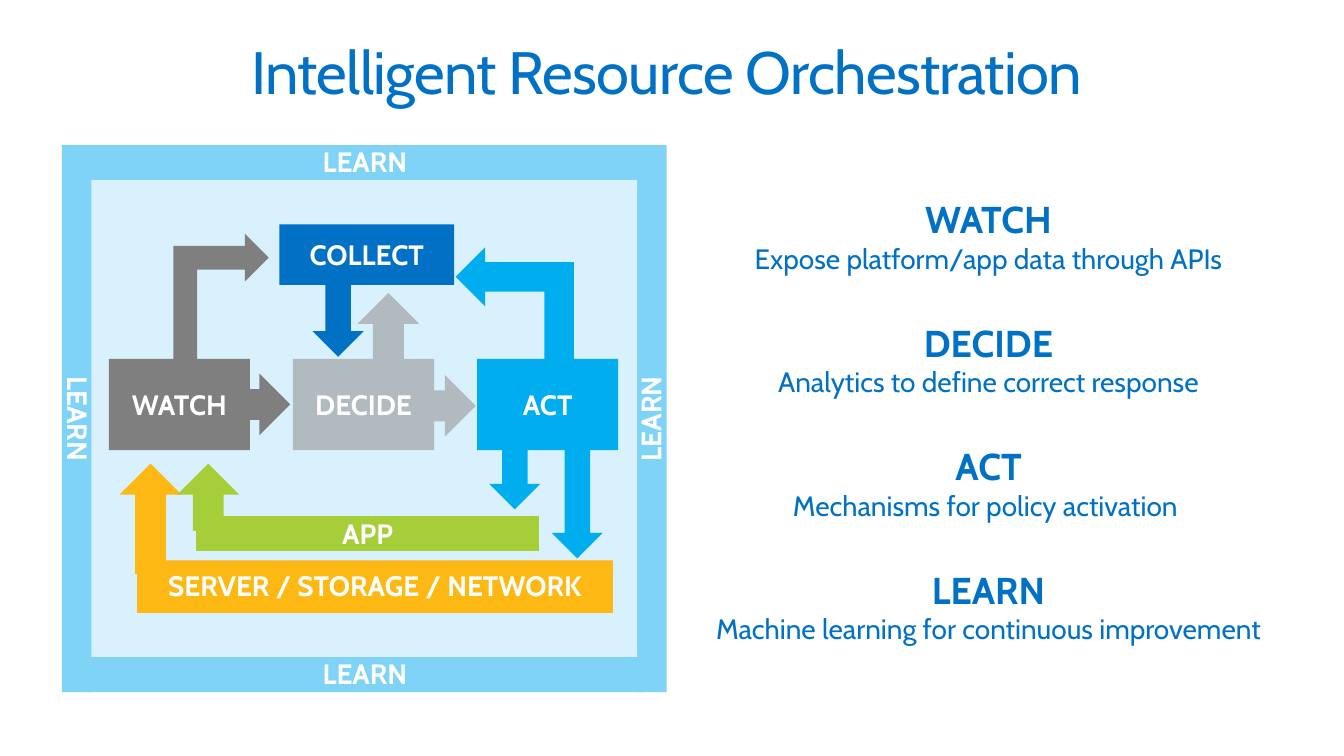
from lxml import etree
from pptx import Presentation
from pptx.dml import color
from pptx.enum import shapes, text
from pptx.oxml import ns
from pptx.util import Inches, Pt

FONT = "Cabin"
WHITE = "FFFFFF"
BLUE = "0071C5"
CYAN = "00AEEF"
SKY = "7ED3F7"
GRAY = "7F7F7F"
SILVER = "B1BABF"
ORANGE = "FDB813"
GREEN = "A6CE39"
RECTANGLE = shapes.MSO_SHAPE.RECTANGLE
ARROW = shapes.MSO_SHAPE.RIGHT_ARROW
BENT_ARROW = shapes.MSO_SHAPE.BENT_UP_ARROW


def rgb(value):
    return color.RGBColor.from_string(value)


def add_run(paragraph, words, size, fill, bold=False):
    paragraph.alignment = text.PP_ALIGN.CENTER
    run = paragraph.add_run()
    run.text = words
    run.font.name = FONT
    run.font.size = Pt(size)
    run.font.bold = bold
    run.font.color.rgb = rgb(fill)
    return run


def set_insets(frame, horizontal, vertical):
    frame.word_wrap = True
    frame.margin_left = frame.margin_right = Inches(horizontal)
    frame.margin_top = frame.margin_bottom = Inches(vertical)


def add_block(slide, kind, box, fill, rotation=0):
    shape = slide.shapes.add_shape(kind, *map(Inches, box))
    shape.shadow.inherit = False
    shape.fill.solid()
    shape.fill.fore_color.rgb = rgb(fill)
    shape.line.fill.background()
    shape.rotation = rotation
    return shape


def add_label(slide, box, fill, words, rotation=0, spacing=1.0):
    shape = add_block(slide, RECTANGLE, box, fill, rotation)
    frame = shape.text_frame
    set_insets(frame, 0.06, 0.03)
    frame.vertical_anchor = text.MSO_ANCHOR.MIDDLE
    frame.paragraphs[0].line_spacing = spacing
    add_run(frame.paragraphs[0], words, 15, WHITE, True)


def add_title(slide, left, top, width, height):
    box = slide.shapes.add_textbox(*map(Inches, (left, top, width, height)))
    set_insets(box.text_frame, 0, 0)
    run = add_run(box.text_frame.paragraphs[0],
                  "Intelligent Resource Orchestration", 32, BLUE)
    run.font._element.set("spc", "-40")


def add_learn_frame(slide, left, top, width, height):
    side, bar = 0.22, 0.26
    panel = add_block(slide, RECTANGLE,
                      (left + 0.19, top + 0.23, 4.15, 3.63), SKY)
    tint = panel.fill._xPr.find(ns.qn("a:solidFill"))[0]
    etree.SubElement(tint, ns.qn("a:alpha")).set("val", "30000")
    for y in (top, top + height - bar):
        add_label(slide, (left + 0.18, y, 4.15, bar), SKY, "LEARN", 0, 0.95)
    middle = top + (height - side) / 2
    for center, rotation in ((left + side / 2, 90),
                             (left + width - side / 2, 270)):
        add_label(slide, (center - height / 2, middle, height, side),
                  SKY, "LEARN", rotation, 0.95)


def add_flow(slide, left, top):
    arrows = [
        (ARROW, 3.06, 2.21, 0.62, 0.38, CYAN, 90),
        (ARROW, 3.31, 2.36, 1.05, 0.38, CYAN, 90),
        (BENT_ARROW, 2.91, 0.78, 0.92, 0.88, CYAN, 270),
        (ARROW, 2.16, 1.14, 0.54, 0.46, SILVER, 270),
        (BENT_ARROW, 0.64, 0.85, 1.09, 0.71, GRAY, 90),
        (ARROW, 1.77, 1.1, 0.57, 0.38, BLUE, 90),
        (ARROW, 2.31, 1.71, 0.77, 0.46, SILVER, 0),
        (ARROW, 0.93, 1.7, 0.77, 0.46, GRAY, 0),
        (ARROW, 0.25, 2.55, 0.82, 0.46, ORANGE, 270),
        (ARROW, 0.84, 2.39, 0.5, 0.46, GREEN, 270),
    ]
    for kind, x, y, width, height, fill, rotation in arrows:
        arrow = add_block(slide, kind, (left + x, top + y, width, height),
                          fill, rotation)
        if kind == BENT_ARROW and rotation == 90:
            arrow._element.spPr.find(ns.qn("a:xfrm")).set("flipH", "1")

    steps = (("WATCH", GRAY), ("DECIDE", SILVER), ("ACT", CYAN))
    for index, (words, fill) in enumerate(steps):
        add_label(slide, (left + 0.35 + 1.37 * index, top + 1.59, 1.05, 0.68),
                  fill, words)
    add_label(slide, (left + 1.62, top + 0.59, 1.3, 0.45), BLUE, "COLLECT")
    add_label(slide, (left + 0.56, top + 3.09, 3.54, 0.39), ORANGE,
              "SERVER / STORAGE / NETWORK", 0, 0.95)
    add_label(slide, (left + 1, top + 2.76, 2.55, 0.26), GREEN, "APP")


def add_definitions(slide, left, top, width):
    definitions = (
        ("WATCH", "Expose platform/app data through APIs"),
        ("DECIDE", "Analytics to define correct response"),
        ("ACT", "Mechanisms for policy activation "),
        ("LEARN", "Machine learning for continuous improvement"),
    )
    for index, (term, meaning) in enumerate(definitions):
        box = slide.shapes.add_textbox(
            Inches(left), Inches(top + 0.92 * index),
            Inches(width), Inches(0.65))
        frame = box.text_frame
        set_insets(frame, 0.06, 0.03)
        add_run(frame.paragraphs[0], term, 20, BLUE, True)
        add_run(frame.add_paragraph(), meaning, 15, BLUE)


def main():
    presentation = Presentation()
    presentation.slide_width = Inches(10)
    presentation.slide_height = presentation.slide_width * 9 // 16
    slide = presentation.slides.add_slide(presentation.slide_layouts[6])
    add_learn_frame(slide, 0.46, 1.08, 4.5, 4.07)
    add_flow(slide, 0.46, 1.08)
    add_title(slide, 0.12, 0.26, 9.68, 0.64)
    add_definitions(slide, 5.1, 1.43, 4.51)
    presentation.save("out.pptx")


if __name__ == "__main__":
    main()
